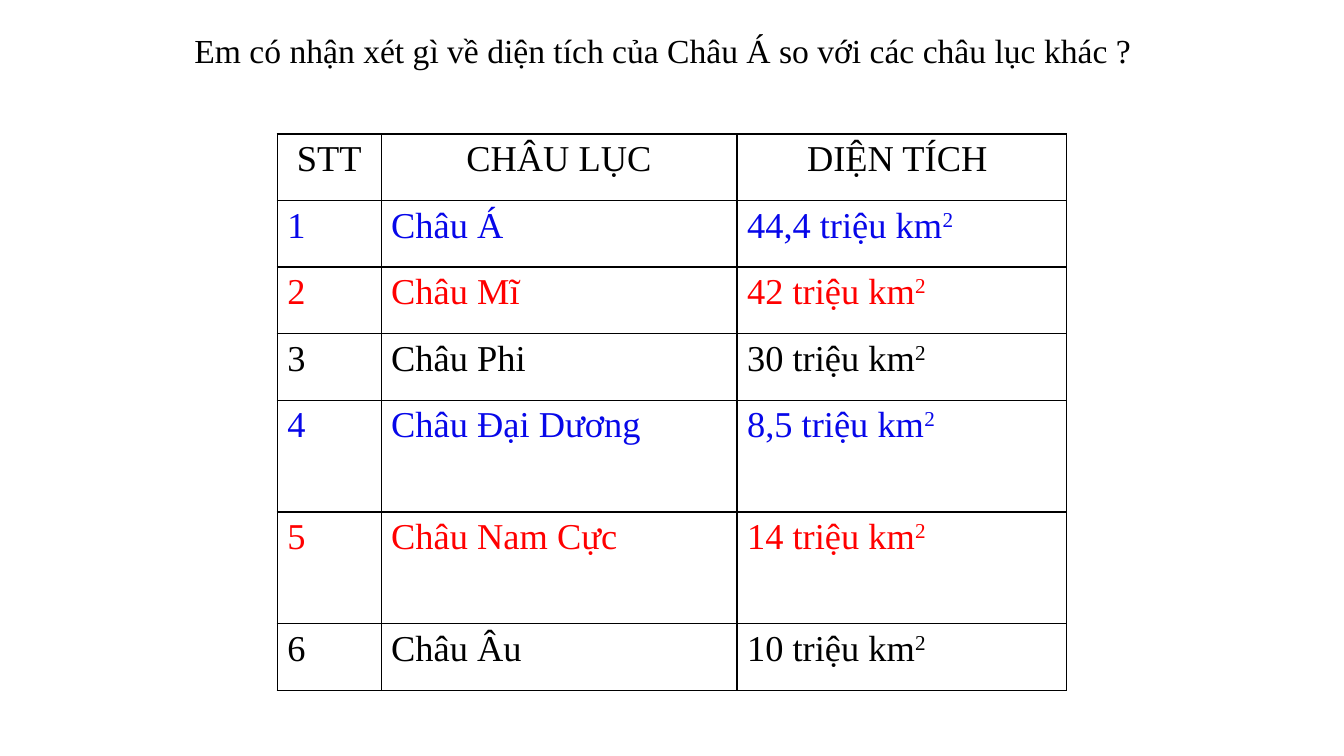
from lxml import etree
from pptx import Presentation
from pptx import util as u
from pptx.dml.color import RGBColor
from pptx.enum import text
from pptx.oxml.ns import qn

BLACK, BLUE, RED = "000000", "0707E9", "FF0000"
HEADERS = ["STT", "CHÂU LỤC", "DIỆN TÍCH "]
CONTINENTS = [
    ("Châu Á", "44,4", BLUE),
    ("Châu Mĩ", "42", RED),
    ("Châu Phi", "30", BLACK),
    ("Châu Đại Dương", "8,5", BLUE),
    ("Châu Nam Cực", "14", RED),
    ("Châu Âu", "10", BLACK),
]
COLUMN_WIDTHS = [1.03, 3.53, 3.27]
ROW_HEIGHTS = [0.66] * 4 + [1.11] * 2 + [0.66]


def rgb(color):
    return RGBColor.from_string(color)


def add_run(p, words, size=26, color=BLACK, font="Times New Roman", superscript=False):
    r = p.add_run()
    r.text = words
    r.font.size = u.Pt(size)
    r.font.name = font
    r.font.color.rgb = rgb(color)
    if superscript:
        r._r.get_or_add_rPr().set("baseline", "30000")


class SlideBuilder:
    def __init__(self, prs):
        self.slide = prs.slides.add_slide(prs.slide_layouts[6])
        self.line_color = BLACK
        self.line_width = u.Pt(1)
        self.hanging = u.Inches(0.38)

    def question(self, words, left, top, width, height):
        box = self.slide.shapes.add_textbox(*map(u.Inches, (left, top, width, height)))
        tf = box.text_frame
        tf.word_wrap = True
        tf.auto_size = text.MSO_AUTO_SIZE.SHAPE_TO_FIT_TEXT
        p = tf.paragraphs[0]
        before = etree.SubElement(p._p.get_or_add_pPr(), qn("a:spcBef"))
        etree.SubElement(before, qn("a:spcPct"), val="50000")
        add_run(p, words, size=24)
        add_run(p, " ", size=18, font="Arial")

    def table(self, left, top, widths, heights):
        size = (left, top, sum(widths), sum(heights))
        frame = self.slide.shapes.add_table(len(heights), len(widths), *map(u.Inches, size))
        table = frame.table
        table.first_row = table.horz_banding = False
        for column, width in zip(table.columns, widths):
            column.width = u.Inches(width)
        for row, height in zip(table.rows, heights):
            row.height = u.Inches(height)
        return table

    def cell(self, cell, words, color=BLACK, centered=False, exponent=""):
        self.borders(cell)
        cell.fill.background()
        p = cell.text_frame.paragraphs[0]
        pPr = p._p.get_or_add_pPr()
        pPr.set("marL", str(self.hanging))
        pPr.set("indent", str(-self.hanging))
        p.alignment = text.PP_ALIGN.CENTER if centered else text.PP_ALIGN.LEFT
        add_run(p, words, color=color)
        if exponent:
            add_run(p, exponent, color=color, superscript=True)

    def borders(self, cell):
        tcPr = cell._tc.get_or_add_tcPr()
        for side in ("a:lnL", "a:lnR", "a:lnT", "a:lnB"):
            line = etree.SubElement(tcPr, qn(side), w=str(self.line_width))
            fill = etree.SubElement(line, qn("a:solidFill"))
            etree.SubElement(fill, qn("a:srgbClr"), val=self.line_color)


def main():
    prs = Presentation()
    prs.slide_width, prs.slide_height = u.Inches(13.33), u.Inches(7.5)
    s = SlideBuilder(prs)

    areas = s.table(2.75, 1.33, COLUMN_WIDTHS, ROW_HEIGHTS)
    for col, header in enumerate(HEADERS):
        s.cell(areas.cell(0, col), header, centered=True)
    for row, (name, area, color) in enumerate(CONTINENTS, start=1):
        s.cell(areas.cell(row, 0), str(row), color)
        s.cell(areas.cell(row, 1), name, color)
        s.cell(areas.cell(row, 2), f"{area} triệu km", color, exponent="2")

    s.question("Em có nhận xét gì về diện tích của Châu Á so với các châu lục khác ?",
               1.83, 0.25, 9.67, 0.5)
    prs.save("out.pptx")


if __name__ == "__main__":
    main()
